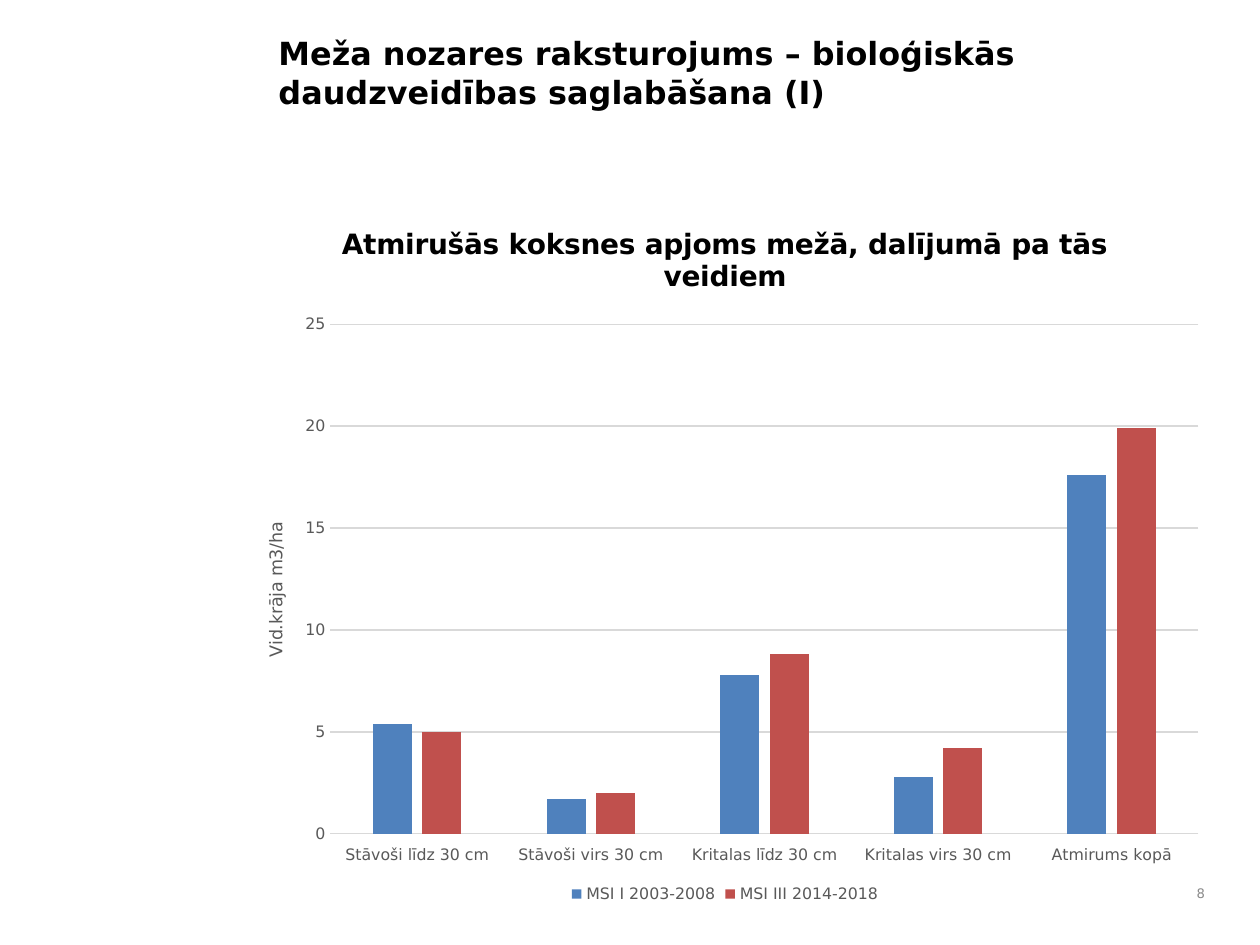
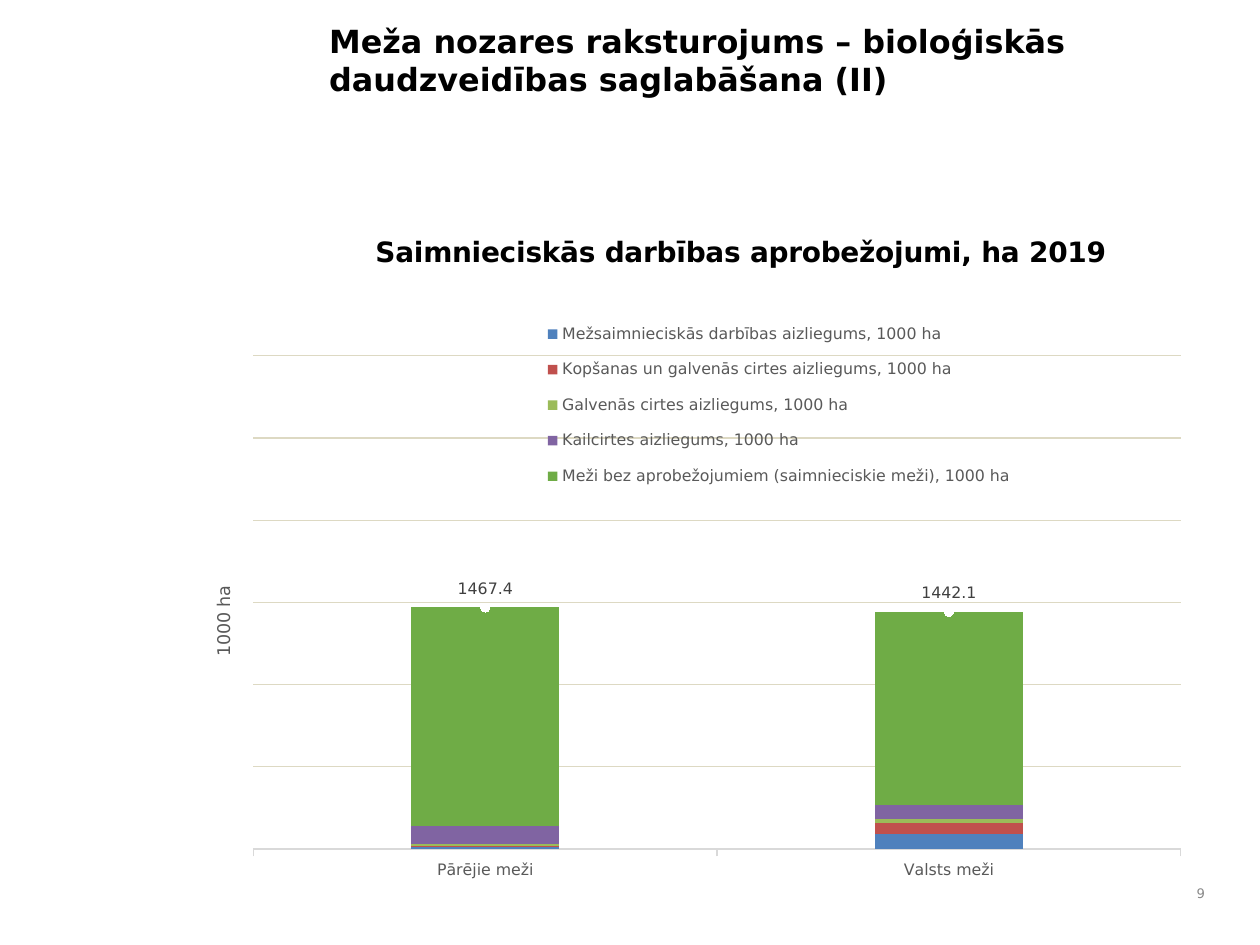
from lxml.etree import SubElement
from pptx import Presentation
from pptx.chart.data import CategoryChartData
from pptx.dml.color import RGBColor
from pptx.enum.chart import (XL_CHART_TYPE as ChartType, XL_LABEL_POSITION as LabelPos,
                             XL_LEGEND_POSITION as LegendPos, XL_MARKER_STYLE as Marker,
                             XL_TICK_LABEL_POSITION as TickLabels, XL_TICK_MARK as Tick)
from pptx.enum.text import MSO_ANCHOR as Anchor, MSO_AUTO_SIZE as AutoSize, PP_ALIGN as Align
from pptx.oxml import parse_xml
from pptx.oxml.ns import nsdecls, qn
from pptx.util import Cm, Pt

FONT = "DejaVu Sans"
BLACK, GREY, PALE, NUMBER_GREY = "000000", "595959", "D9D9D9", "898989"
HEADING = "Meža nozares raksturojums – bioloģiskās daudzveidības saglabāšana"

# Content: boxes are left, top, width, height in cm; layouts are fractions of the chart
DEADWOOD = dict(
    part="(I)", number="8", heading_box=(5.36, 0.56, 20.04, 2.36),
    chart_box=(4.67, 4.04, 19.89, 14.27), kind=ChartType.COLUMN_CLUSTERED,
    title="Atmirušās koksnes apjoms mežā, dalījumā pa tās veidiem", title_at=None,
    unit="Vid.krāja m3/ha", unit_at=(0.03, 0.45),
    plot_at=(0.1, 0.175, 0.88, 0.72), grid="D9D9D9", top=25, step=5,
    gap=219, overlap=-27, legend=LegendPos.BOTTOM, tick=Tick.NONE,
    categories=["Stāvoši līdz 30 cm", "Stāvoši virs 30 cm", "Kritalas līdz 30 cm",
                "Kritalas virs 30 cm", "Atmirums kopā"],
    series=[("MSI I 2003-2008", "4F81BD", (5.4, 1.7, 7.8, 2.8, 17.6)),
            ("MSI III 2014-2018", "C0504D", (5, 2, 8.8, 4.2, 19.9))],
)
RESTRICTIONS = dict(
    part="(II)", number="9", heading_box=(6.38, 0.3, 16.94, 2.87),
    chart_box=(3.81, 3.94, 20.32, 15.11), kind=ChartType.COLUMN_STACKED,
    title="Saimnieciskās darbības aprobežojumi, ha 2019", title_at=(0.18, 0.045),
    unit="1000 ha", unit_at=(0.02, 0.517),
    plot_at=(0.064, 0.214, 0.92, 0.658), grid="DDD9C3", top=3000, step=500,
    gap=213, overlap=100, legend=LegendPos.TOP, tick=Tick.OUTSIDE,
    categories=["Pārējie meži", "Valsts meži"],
    series=[("Mežsaimnieciskās darbības aizliegums, 1000 ha", "4F81BD", (10, 90)),
            ("Kopšanas un galvenās cirtes aizliegums, 1000 ha", "C0504D", (10, 70)),
            ("Galvenās cirtes aizliegums, 1000 ha", "9BBB59", (10, 20)),
            ("Kailcirtes aizliegums, 1000 ha", "8064A2", (110, 90)),
            ("Meži bez aprobežojumiem (saimnieciskie meži), 1000 ha", "6FAC46", (1330, 1170)),
            ("Series 6", "F79646", (1467.4, 1442.1))],
)
LEGEND_AT = (0.335, 0.15, 0.5, 0.26)


def rgb(code):
    return RGBColor.from_string(code)


def style(font, size, color, bold=False):
    font.name, font.size, font.bold = FONT, Pt(size), bold
    font.color.rgb = rgb(color)


def write(frame, text, size=10, color=BLACK, bold=False, align=None):
    frame.text = text
    paragraph = frame.paragraphs[0]
    if align is not None:
        paragraph.alignment = align
    style(paragraph.runs[0].font, size, color, bold)


def place(shape, box):
    shape.left, shape.top, shape.width, shape.height = map(Cm, box)


def set_layout(parent, after, spot, inner=False):
    """Fix a chart part at the given fractions, just behind the child named after."""
    for old in parent.findall(qn("c:layout")):
        parent.remove(old)
    layout = parse_xml(f"<c:layout {nsdecls('c')}><c:manualLayout/></c:layout>")
    if after:
        parent.find(qn(after)).addnext(layout)
    else:
        parent.insert(0, layout)
    settings = [("layoutTarget", "inner")] if inner else []
    settings += [("xMode", "edge"), ("yMode", "edge"), *zip("xywh", spot)]
    for tag, value in settings:
        SubElement(layout[0], qn(f"c:{tag}")).set("val", str(value))


def style_axes(chart, topic):
    category, value = chart.category_axis, chart.value_axis
    for axis in (category, value):
        style(axis.tick_labels.font, 9, GREY)
        axis.minor_tick_mark = Tick.NONE
    category.major_tick_mark, value.major_tick_mark = topic["tick"], Tick.NONE
    category.tick_label_position = TickLabels.LOW
    category.format.line.color.rgb = rgb(PALE)
    category.format.line.width = Pt(0.75)
    value.format.line.fill.background()
    value.minimum_scale, value.maximum_scale = 0, topic["top"]
    value.major_unit = topic["step"]
    value.major_gridlines.format.line.color.rgb = rgb(topic["grid"])
    value.major_gridlines.format.line.width = Pt(0.75)
    write(value.axis_title.text_frame, topic["unit"], color=GREY)
    set_layout(value.axis_title._element, "c:tx", topic["unit_at"])


def add_topic_chart(slide, topic):
    data = CategoryChartData()
    data.categories = topic["categories"]
    for name, _, values in topic["series"]:
        data.add_series(name, values)
    chart = slide.shapes.add_chart(topic["kind"], *map(Cm, topic["chart_box"]), data).chart
    style(chart.font, 10, BLACK)

    # Title
    chart.has_title = True
    write(chart.chart_title.text_frame, topic["title"], size=16, bold=True)
    if topic["title_at"]:
        set_layout(chart.chart_title._element, "c:tx", topic["title_at"])

    # Columns
    columns = chart.plots[0]
    columns.gap_width, columns.overlap = topic["gap"], topic["overlap"]
    columns.vary_by_categories = False
    for column, (_, color, _) in zip(columns.series, topic["series"]):
        column.format.fill.solid()
        column.format.fill.fore_color.rgb = rgb(color)
        column.invert_if_negative = False

    style_axes(chart, topic)
    set_layout(chart._chartSpace.chart.plotArea, None, topic["plot_at"], inner=True)

    # Legend
    chart.has_legend = True
    chart.legend.position = topic["legend"]
    chart.legend.include_in_layout = False
    style(chart.legend.font, 9, GREY)
    return chart


def turn_last_into_totals(chart):
    """Show the last series as totals above the stacks: markers without a line."""
    bars = chart._chartSpace.chart.plotArea.find(qn("c:barChart"))
    totals = bars.findall(qn("c:ser"))[-1]
    for tag in ("c:invertIfNegative", "c:spPr"):
        for child in totals.findall(qn(tag)):
            totals.remove(child)
    lines = parse_xml(f'<c:lineChart {nsdecls("c")}><c:grouping val="standard"/>'
                      '<c:varyColors val="0"/><c:marker val="1"/></c:lineChart>')
    lines.insert(2, totals)
    for axis in bars.findall(qn("c:axId")):
        SubElement(lines, qn("c:axId")).set("val", axis.get("val"))
    bars.addnext(lines)

    line = chart.plots[1].series[0]
    line.smooth = False
    line.format.line.fill.background()
    line.marker.style, line.marker.size = Marker.CIRCLE, 5
    line.marker.format.fill.solid()
    line.marker.format.fill.fore_color.rgb = rgb("FFFFFF")
    line.marker.format.line.fill.background()
    line.data_labels.show_value = True
    line.data_labels.position = LabelPos.ABOVE
    style(line.data_labels.font, 9, "404040")


def list_legend_inside(chart, hidden):
    legend = chart.legend._element
    set_layout(legend, "c:legendPos", LEGEND_AT)
    legend.find(qn("c:legendPos")).addnext(parse_xml(
        f'<c:legendEntry {nsdecls("c")}><c:idx val="{hidden}"/>'
        '<c:delete val="1"/></c:legendEntry>'))


def add_topic_slide(prs, topic):
    slide = prs.slides.add_slide(prs.slide_layouts[5])

    # Heading
    heading = slide.shapes.title
    place(heading, topic["heading_box"])
    write(heading.text_frame, f"{HEADING} {topic['part']}", size=18.2, bold=True,
          align=Align.LEFT)
    heading.text_frame.vertical_anchor = Anchor.TOP
    heading.text_frame.auto_size = AutoSize.NONE

    # Slide number
    number = slide.shapes.add_textbox(Cm(23.7), Cm(17.58), Cm(0.84), Cm(0.84)).text_frame
    number.word_wrap = True
    number.vertical_anchor = Anchor.MIDDLE
    write(number, topic["number"], size=7.5, color=NUMBER_GREY, align=Align.RIGHT)
    return add_topic_chart(slide, topic)


def main():
    prs = Presentation()
    prs.slide_width, prs.slide_height = Cm(25.4), Cm(19.05)
    add_topic_slide(prs, DEADWOOD)
    restrictions = add_topic_slide(prs, RESTRICTIONS)
    restrictions.value_axis.visible = False
    turn_last_into_totals(restrictions)
    list_legend_inside(restrictions, hidden=len(RESTRICTIONS["series"]) - 1)
    prs.save("out.pptx")


if __name__ == "__main__":
    main()
